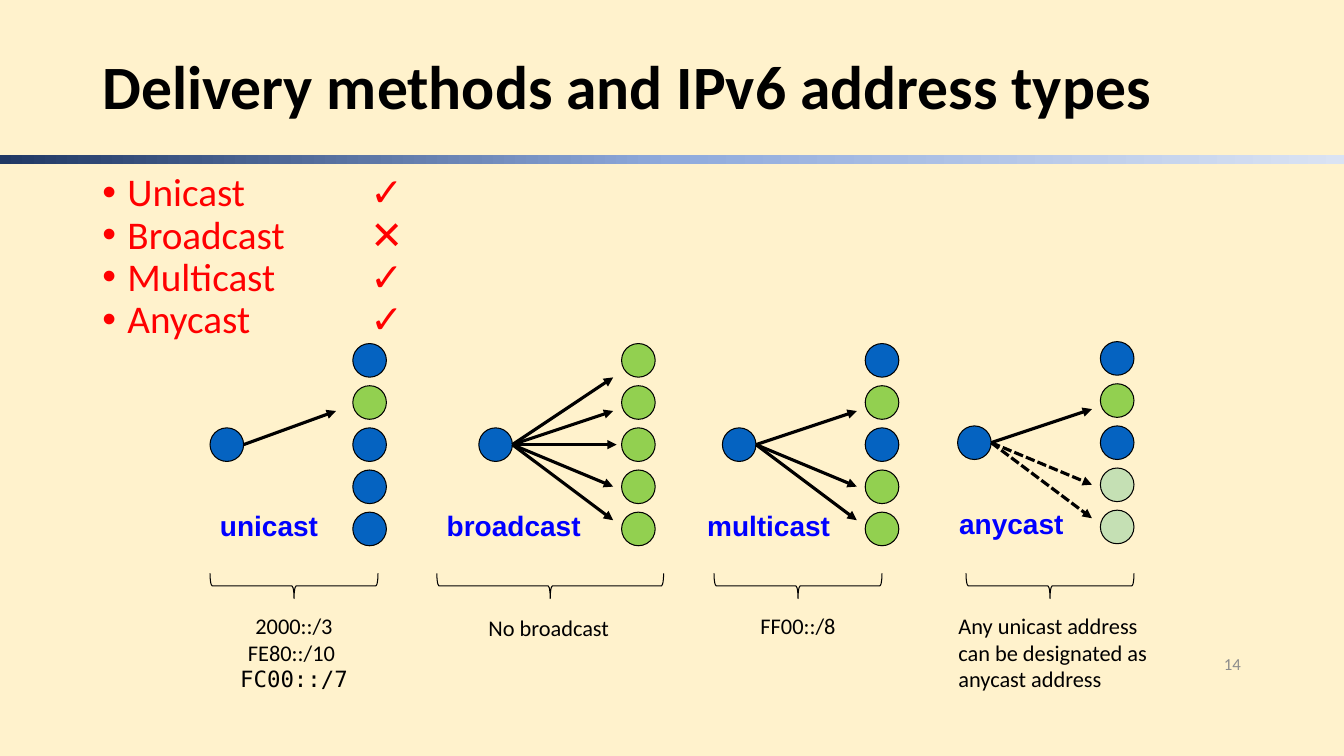
"""Build a slide on delivery methods and IPv6 address types."""
from copy import deepcopy

from lxml import etree
from pptx import Presentation
from pptx.dml.color import RGBColor
from pptx.enum.dml import MSO_LINE
from pptx.enum.shapes import MSO_CONNECTOR, MSO_SHAPE
from pptx.enum.text import MSO_ANCHOR, PP_ALIGN
from pptx.oxml.ns import qn
from pptx.util import Pt

LEFT, MID, RIGHT = PP_ALIGN.LEFT, PP_ALIGN.CENTER, PP_ALIGN.RIGHT
TOP, CENTER = MSO_ANCHOR.TOP, MSO_ANCHOR.MIDDLE
OVAL, BRACE, RECT = MSO_SHAPE.OVAL, MSO_SHAPE.RIGHT_BRACE, MSO_SHAPE.RECTANGLE
DASH, STRAIGHT = MSO_LINE.SQUARE_DOT, MSO_CONNECTOR.STRAIGHT

BLACK = RGBColor.from_string("000000")
THEME = {
    "back": RGBColor.from_string("FFF2CC"),
    "bar": [(0, "203864"), (50000, "8FAADC"), (100000, "DAE3F3")],
    "host": {
        "B": RGBColor.from_string("0563C1"),
        "G": RGBColor.from_string("92D050"),
        "P": RGBColor.from_string("C5E0B4"),
    },
    "line": BLACK,
    "mono": "DejaVu Sans Mono",
    "title": {"size": Pt(44), "name": "Calibri", "bold": True, "color": BLACK},
    "list": {"size": Pt(28), "name": "Calibri", "color": RGBColor.from_string("FF0000")},
    "label": {"size": Pt(20), "name": "Arial", "bold": True, "color": RGBColor.from_string("0000FF")},
    "note": {"size": Pt(16), "name": "Calibri", "color": BLACK},
    "page": {"size": Pt(12), "name": "Calibri", "color": RGBColor.from_string("8C8C8C")},
}

deck = Presentation()
deck.slide_width, deck.slide_height = Pt(960), Pt(540)
slide = deck.slides.add_slide(deck.slide_layouts[6])
slide.background.fill.solid()
slide.background.fill.fore_color.rgb = THEME["back"]
shapes = slide.shapes


def add_text(lines, box, style, align=LEFT, anchor=TOP, space=1.0):
    """Add a text box with one paragraph per line and return its paragraphs."""
    frame = shapes.add_textbox(*map(Pt, box)).text_frame
    frame.word_wrap = True
    frame.vertical_anchor = anchor
    frame.text = "\n".join(lines)
    for para in frame.paragraphs:
        para.alignment, para.line_spacing = align, space
        for run in para.runs:
            for key, value in THEME[style].items():
                if key == "color":
                    run.font.color.rgb = value
                else:
                    setattr(run.font, key, value)
    return frame.paragraphs


def add_shape(kind, box, color=None):
    """Add a thinly outlined shape, filled when a color is given."""
    shape = shapes.add_shape(kind, *map(Pt, box))
    shape.shadow.inherit = False
    shape.line.color.rgb, shape.line.width = THEME["line"], Pt(0.75)
    if color is None:
        shape.fill.background()
    else:
        shape.fill.solid()
        shape.fill.fore_color.rgb = color
    return shape


bar = add_shape(RECT, (0, 111, 960, 6.5))
bar.line.fill.background()
bar.fill.gradient()
bar.fill.gradient_angle = 0
stops = bar._element.spPr.find(".//" + qn("a:gsLst"))
stops.insert(1, deepcopy(stops[0]))
for stop, (place, color) in zip(bar.fill.gradient_stops, THEME["bar"]):
    stop.position = place / 100000
    stop.color.rgb = RGBColor.from_string(color)

add_text(["Delivery methods and IPv6 address types"], (66, 28.75, 828, 70),
         "title", anchor=CENTER, space=0.9)

casts = ["Unicast\t✓", "Broadcast\t✕", "Multicast\t✓", "Anycast\t✓"]
for para in add_text(casts, (66, 120, 828, 358), "list", space=0.9):
    props = para._p.get_or_add_pPr()
    props.set("marL", str(Pt(18)))
    props.set("indent", str(-Pt(18)))
    etree.SubElement(props, qn("a:buFont"), typeface="Arial")
    etree.SubElement(props, qn("a:buChar"), char="•")
    tabs = etree.SubElement(props, qn("a:tabLst"))
    etree.SubElement(tabs, qn("a:tab"), pos=str(Pt(191.5)), algn="l")

SIZE, STEP, GAP = 24, 30.1, 102
groups = [
    {"name": "unicast", "left": 150, "mid": 317.6, "hosts": "BGBBB",
     "solid": [(66, -24)], "dashed": [], "label": (150, 96),
     "brace": (210, 120), "note": (132, 433.5, 156, 66), "align": MID,
     "text": ["2000::/3", "FE80::/10 ", "FC00::/7"]},
    {"name": "broadcast", "left": 342, "mid": 317.6, "hosts": "GGGGG",
     "solid": [(72, -48), (72, -24), (74.5, 0), (72, 30), (72, 54)], "dashed": [],
     "label": (312, 120), "brace": (393, 162), "note": (314, 435, 156, 27),
     "align": MID, "text": ["No broadcast"]},
    {"name": "multicast", "left": 516, "mid": 317.6, "hosts": "BGBGG",
     "solid": [(72, -24), (72, 30), (72, 54)], "dashed": [], "label": (498, 120),
     "brace": (570, 120), "note": (492, 433.5, 156, 27), "align": MID,
     "text": ["FF00::/8"]},
    {"name": "anycast", "left": 684, "mid": 316.2, "hosts": "BGBPP",
     "solid": [(72, -24)], "dashed": [(72, 30), (72, 54)], "label": (678, 120),
     "brace": (750, 120), "note": (677.5, 433.5, 159, 66), "align": LEFT,
     "text": ["Any unicast address can be designated as anycast address"]},
]

for group in groups:
    left, mid = group["left"], group["mid"]
    add_shape(OVAL, (left, mid - SIZE / 2, SIZE, SIZE), THEME["host"]["B"])
    for row, host in enumerate(group["hosts"]):
        top = mid - SIZE / 2 + (row - 2) * STEP
        add_shape(OVAL, (left + GAP, top, SIZE, SIZE), THEME["host"][host])

    start = left + SIZE
    for kind in ("solid", "dashed"):
        for run, rise in group[kind]:
            ends = (start, mid, start + run, mid + rise)
            arrow = shapes.add_connector(STRAIGHT, *map(Pt, ends))
            arrow.line.color.rgb, arrow.line.width = THEME["line"], Pt(2.25)
            if kind == "dashed":
                arrow.line.dash_style = DASH
            etree.SubElement(arrow.line._get_or_add_ln(), qn("a:tailEnd"), type="triangle")
            etree.SubElement(arrow._element.spPr, qn("a:effectLst"))

    edge, width = group["label"]
    add_text([group["name"]], (edge, mid + 42.4, width, 31), "label")

    axis, span = group["brace"]
    brace = add_shape(BRACE, (axis - 9, 418.5 - span / 2, 18, span))
    brace.rotation = 90

    for para in add_text(group["text"], group["note"], "note", group["align"]):
        if para.text.startswith("FC00"):
            para.runs[0].font.name = THEME["mono"]

add_text(["14"], (796.5, 460, 97, 28.75), "page", RIGHT, CENTER)

deck.save("out.pptx")
